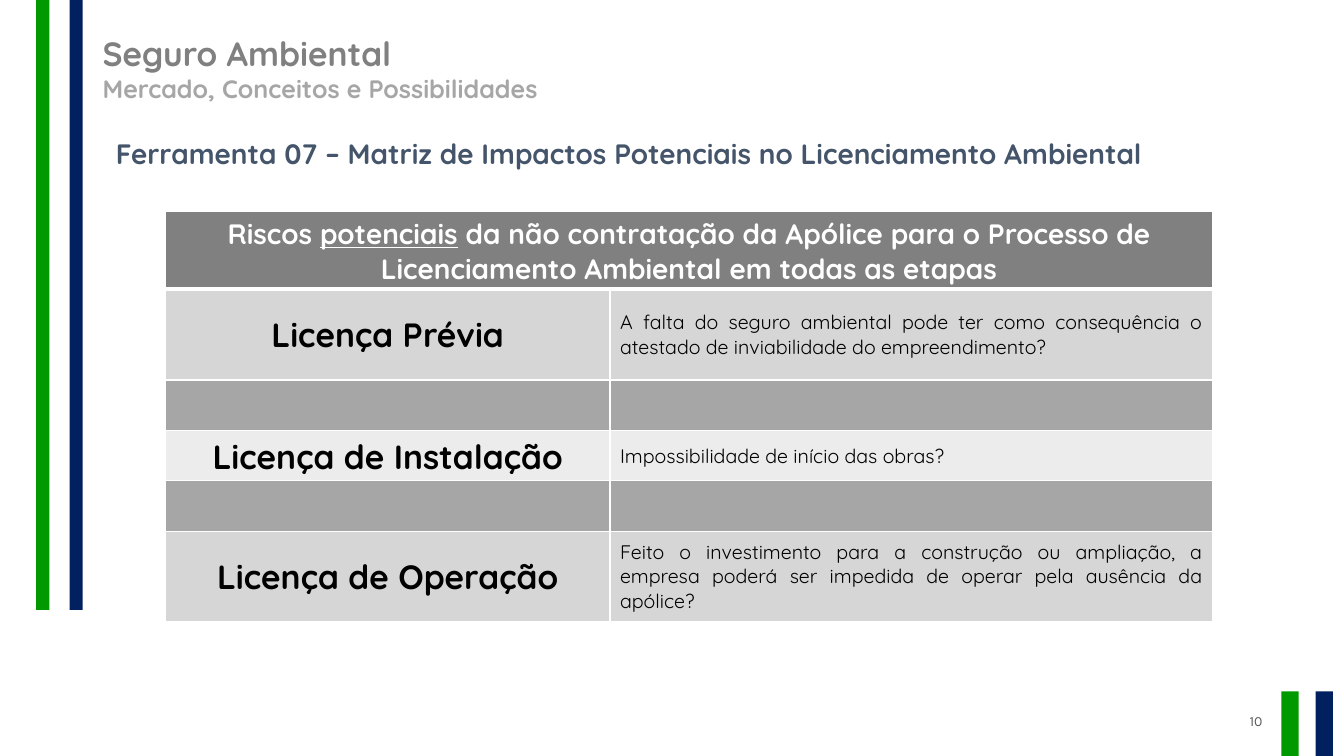
from lxml import etree
from pptx import Presentation
from pptx.dml.color import RGBColor
from pptx.enum.shapes import MSO_SHAPE
from pptx.enum.text import MSO_ANCHOR, PP_ALIGN
from pptx.oxml.ns import qn
from pptx.util import Inches, Pt

RECT = MSO_SHAPE.RECTANGLE
MIDDLE, TOP = MSO_ANCHOR.MIDDLE, MSO_ANCHOR.TOP
LEFT, CENTER, RIGHT, JUSTIFY = (
    PP_ALIGN.LEFT, PP_ALIGN.CENTER, PP_ALIGN.RIGHT, PP_ALIGN.JUSTIFY)

# Content
COLORS = {
    "green": "009900", "navy": "002060", "white": "FFFFFF", "black": "000000",
    "title": "808080", "subtitle": "A6A6A6", "heading": "44546A",
    "number": "595959", "header": "808080", "gap": "A6A6A6",
    "dark": "D6D6D6", "light": "ECECEC",
}
FONT = "Quicksand"
TITLE = "Seguro Ambiental"
SUBTITLE = "Mercado, Conceitos e Possibilidades"
HEADING = "Ferramenta 07 – Matriz de Impactos Potenciais no Licenciamento Ambiental"
PAGE = "10"
HEADER = [
    ("Riscos ", False),
    ("potenciais", True),
    (" da não contratação da Apólice para o Processo de "
     "Licenciamento Ambiental em todas as etapas", False),
]
# Height, fill, licence, risk, alignment of the risk
ROWS = [
    (0.9, "dark", "Licença Prévia",
     "A falta do seguro ambiental pode ter como consequência o atestado de "
     "inviabilidade do empreendimento?", JUSTIFY),
    (0.5, "gap", "", "", LEFT),
    (0.5, "light", "Licença de Instalação",
     "Impossibilidade de início das obras?", LEFT),
    (0.5, "gap", "", "", LEFT),
    (0.9, "dark", "Licença de Operação",
     "Feito o investimento para a construção ou ampliação, a empresa poderá "
     "ser impedida de operar pela ausência da apólice?", JUSTIFY),
]
HEADER_HEIGHT = 0.77
COL_WIDTHS = [4.41, 5.98]
# Left, top, width, height, colour
BARS = [
    (0.36, 0, 0.13, 6.05, "green"),
    (0.69, 0, 0.13, 6.05, "navy"),
    (12.71, 6.86, 0.17, 0.64, "green"),
    (13.05, 6.86, 0.17, 0.64, "navy"),
]


def rgb(name):
    return RGBColor.from_string(COLORS[name])


def style(p, size, color, bold=False, align=LEFT, font=FONT):
    p.alignment = align
    p.font.name, p.font.size, p.font.bold = font, Pt(size), bold
    p.font.color.rgb = rgb(color)


def add_text(box, lines, anchor=TOP):
    """Each line is its text followed by the arguments of style()."""
    tf = s.shapes.add_textbox(*map(Inches, box)).text_frame
    tf.word_wrap = True
    tf.vertical_anchor = anchor
    for i, (text, *look) in enumerate(lines):
        p = tf.paragraphs[0] if i == 0 else tf.add_paragraph()
        p.text = text
        style(p, *look)


def paint(cell, fill, top=1, bottom=1):
    """White borders in points, then the fill."""
    tcPr = cell._tc.get_or_add_tcPr()
    for side, width in (("lnL", 1), ("lnR", 1), ("lnT", top), ("lnB", bottom)):
        ln = etree.SubElement(tcPr, qn("a:" + side), w=str(Pt(width)))
        solid = etree.SubElement(ln, qn("a:solidFill"))
        etree.SubElement(solid, qn("a:srgbClr"), val=COLORS["white"])
    cell.fill.solid()
    cell.fill.fore_color.rgb = rgb(fill)


prs = Presentation()
prs.slide_width, prs.slide_height = Inches(13.33), Inches(7.5)
s = prs.slides.add_slide(prs.slide_layouts[6])

# Side and corner bars
for *box, color in BARS:
    sp = s.shapes.add_shape(RECT, *map(Inches, box))
    sp.shadow.inherit = False
    sp.fill.solid()
    sp.fill.fore_color.rgb = rgb(color)
    sp.line.fill.background()

# Page number, titles and heading
add_text((9.62, 6.95, 3, 0.4),
         [(PAGE, 10, "number", False, RIGHT, "Karla")], MIDDLE)
add_text((0.92, 0.28, 9.79, 0.81),
         [(TITLE, 24, "title", True), (SUBTITLE, 18, "subtitle", True)])
add_text((1.05, 1.31, 11.57, 0.44), [(HEADING, 20, "heading", True)])

# Risk table
heights = [HEADER_HEIGHT] + [row[0] for row in ROWS]
table = s.shapes.add_table(
    len(heights), len(COL_WIDTHS), Inches(1.64), Inches(2.1),
    Inches(sum(COL_WIDTHS)), Inches(sum(heights))).table
for col, width in zip(table.columns, COL_WIDTHS):
    col.width = Inches(width)
for row, height in zip(table.rows, heights):
    row.height = Inches(height)

# Header across both columns
head = table.cell(0, 0)
head.merge(table.cell(0, 1))
for col in range(2):
    paint(table.cell(0, col), "header", bottom=3)
p = head.text_frame.paragraphs[0]
for text, underline in HEADER:
    r = p.add_run()
    r.text = text
    r.font.underline = underline
style(p, 20, "white", True, CENTER)

# Licences and their risks
for i, (_, fill, licence, risk, align) in enumerate(ROWS, 1):
    looks = [(licence, 24, True, CENTER), (risk, 14, False, align)]
    for col, (text, size, bold, alignment) in enumerate(looks):
        cell = table.cell(i, col)
        paint(cell, fill, top=3 if i == 1 else 1)
        cell.vertical_anchor = MIDDLE
        if text:
            cell.text = text
            style(cell.text_frame.paragraphs[0], size, "black", bold, alignment)

prs.save("out.pptx")
